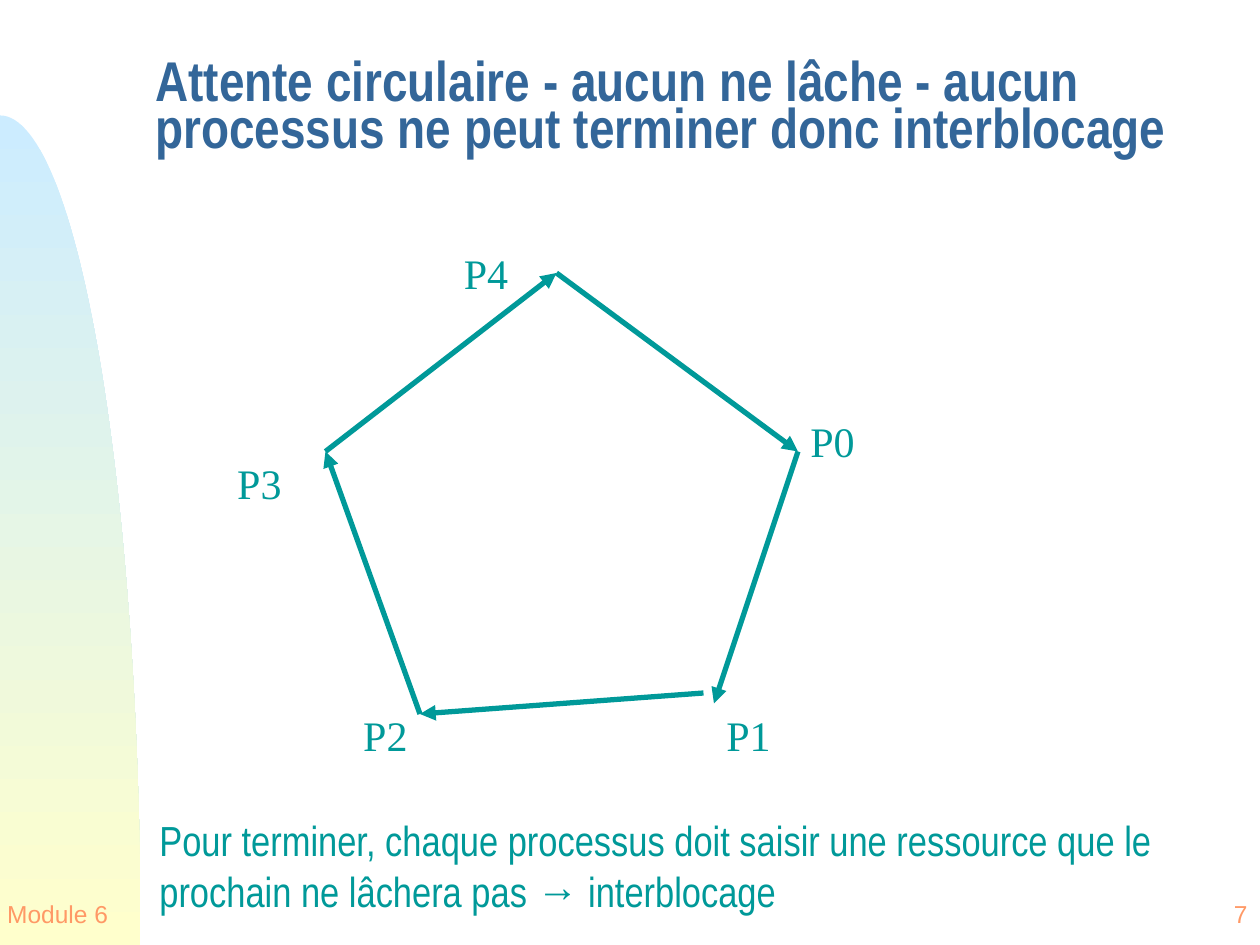
from math import cos, pi, sin

from pptx import Presentation
from pptx.dml.color import RGBColor
from pptx.enum.shapes import MSO_CONNECTOR as Link
from pptx.enum.text import MSO_ANCHOR as Anchor, MSO_AUTO_SIZE as Fit, PP_ALIGN as Align
from pptx.oxml.ns import qn
from pptx.util import Pt
from lxml.etree import SubElement as add_sub

PX = 7620  # EMU per px, at 120 px to the inch
WIDE, HIGH = 1200, 900


def px(*sizes):
    return [size * PX for size in sizes]


def color(code):
    return RGBColor.from_string(code)


def write(frame, text, size=24, font="Times New Roman", ink="009999", bold=False,
          align=Align.LEFT, anchor=Anchor.TOP, wrap=True, space=None):
    frame.word_wrap = wrap
    frame.auto_size = Fit.NONE
    frame.vertical_anchor = anchor
    para = frame.paragraphs[0]
    para.alignment = align
    if space:
        para.line_spacing = space
    run = para.add_run()
    run.text = text
    run.font.size = Pt(size)
    run.font.name = font
    run.font.bold = bold
    run.font.color.rgb = color(ink)


class Board:
    ink = "009999"
    weight = 3

    def __init__(self, slide):
        self.slide = slide
        self.shapes = slide.shapes

    def title(self, text, box, **style):
        shape = self.shapes.title
        shape.left, shape.top, shape.width, shape.height = px(*box)
        write(shape.text_frame, text, **style)

    def label(self, text, box, **style):
        write(self.shapes.add_textbox(*px(*box)).text_frame, text, **style)

    def arrow(self, start, end):
        line = self.shapes.add_connector(Link.STRAIGHT, *px(*start, *end))
        line.line.color.rgb = color(self.ink)
        line.line.width = Pt(self.weight)
        add_sub(line.line._get_or_add_ln(), qn("a:tailEnd"), type="triangle")
        add_sub(line._element.spPr, qn("a:effectLst"))

    def dome(self, width, height, upper, lower, steps=60):
        """Draw a quarter ellipse in the bottom left corner, shaded downwards."""
        turns = [pi / 2 * step / steps for step in range(steps + 1)]
        curve = [(width * PX * sin(turn), (HIGH - height * cos(turn)) * PX)
                 for turn in turns]
        pen = self.shapes.build_freeform(0, HIGH * PX)
        pen.add_line_segments(curve, close=True)
        shape = pen.convert_to_shape()
        shape.shadow.inherit = False
        shape.line.fill.background()
        shape.fill.gradient()
        shape.fill.gradient_angle = 270
        for stop, code in zip(shape.fill.gradient_stops, (upper, lower)):
            stop.color.rgb = color(code)


def main():
    deck = Presentation()
    deck.slide_width, deck.slide_height = px(WIDE, HIGH)
    board = Board(deck.slides.add_slide(deck.slide_layouts[5]))

    board.dome(134, 790, "CCECFF", "FFFFCC")
    footer = dict(size=14, font="Arial", ink="FF9966", anchor=Anchor.MIDDLE, wrap=False)
    board.label("Module 6", (0, 840, 110, 60), align=Align.CENTER, **footer)
    board.label("7", (1116, 840, 84, 60), align=Align.RIGHT, **footer)
    board.title("Attente circulaire - aucun ne lâche - aucun processus "
                "ne peut terminer donc interblocage", (136, 43, 1034, 126),
                size=32, font="Arial Narrow", ink="336699", bold=True,
                anchor=Anchor.MIDDLE, space=0.7)

    top, right, low, left = (530, 260), (760, 430), (400, 680), (310, 430)
    for start, end in ((left, top), (top, right), (right, (680, 670)),
                       ((670, 660), low), (low, left)):
        board.arrow(start, end)

    names = ((760, 390, 320, Align.LEFT), (680, 670, 310, Align.LEFT),
             (140, 670, 260, Align.RIGHT), (200, 430, 80, Align.RIGHT),
             (430, 230, 66, Align.LEFT))
    for rank, (x, y, width, align) in enumerate(names):
        board.label(f"P{rank}", (x, y, width, 60), align=align)

    board.label("Pour terminer, chaque processus doit saisir une ressource que le "
                "prochain ne lâchera pas → interblocage", (140, 770, 980, 108),
                font="Arial Narrow")
    deck.save("out.pptx")


if __name__ == "__main__":
    main()
